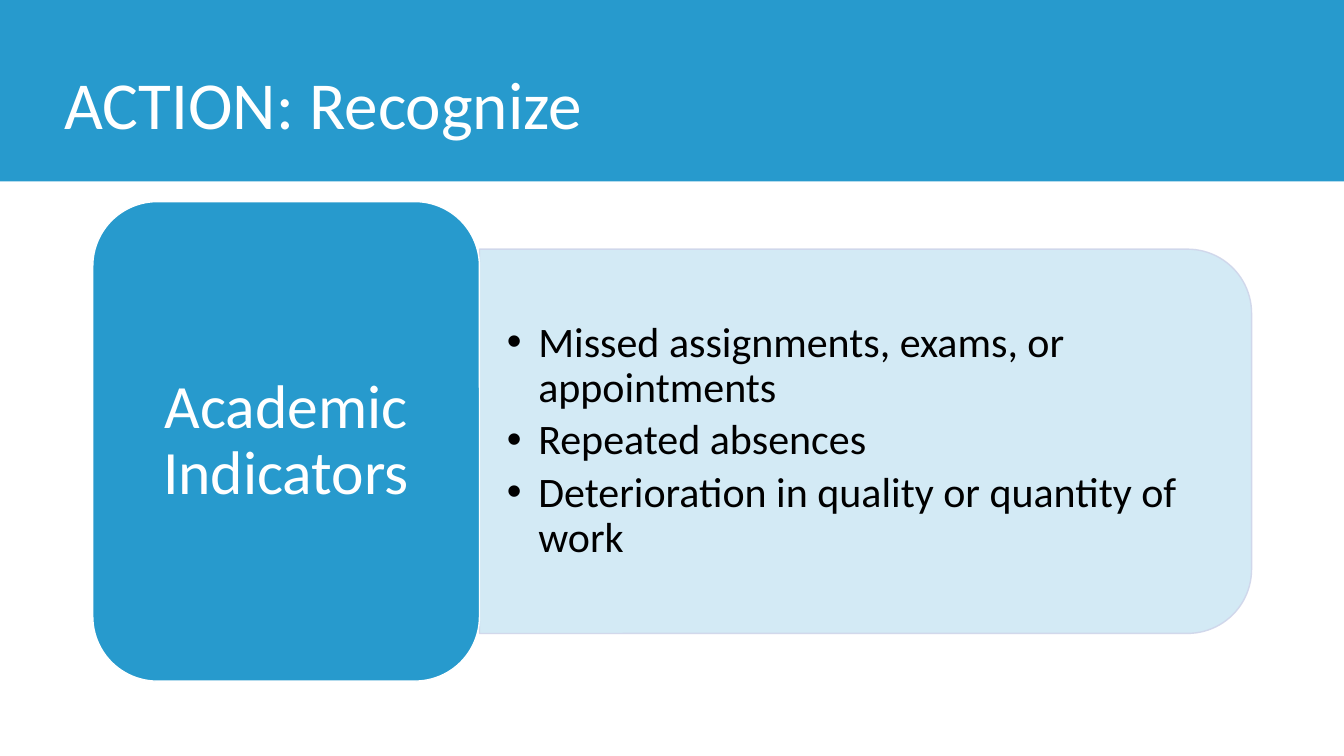
from dataclasses import dataclass

from lxml import etree
from pptx import Presentation
from pptx.dml.color import RGBColor
from pptx.enum.shapes import MSO_SHAPE
from pptx.enum.text import MSO_ANCHOR, PP_ALIGN
from pptx.oxml.ns import qn
from pptx.util import Pt

RECT = MSO_SHAPE.RECTANGLE
ROUNDED = MSO_SHAPE.ROUNDED_RECTANGLE
TWO_ROUNDED = MSO_SHAPE.ROUND_2_SAME_RECTANGLE
MIDDLE = MSO_ANCHOR.MIDDLE
LEFT, CENTER = PP_ALIGN.LEFT, PP_ALIGN.CENTER


@dataclass(frozen=True)
class Theme:
    """Hold the colours, font and type sizes of the slide."""
    blue: str = "279ACD"
    white: str = "FFFFFF"
    black: str = "000000"
    pale_line: str = "CFD5EA"
    font: str = "Calibri"
    title: int = 48
    label: int = 44
    body: int = 30


THEME = Theme()


def set_alpha(fill, percent):
    """Make a solid fill element partly transparent."""
    color = fill.find(qn("a:srgbClr"))
    etree.SubElement(color, qn("a:alpha"), val=str(percent * 1000))


def add_block(s, kind, left, top, width, height, line=None):
    """Add a blue preset shape with an optional one-point outline."""
    sp = s.shapes.add_shape(kind, Pt(left), Pt(top), Pt(width), Pt(height))
    sp.shadow.inherit = False
    sp.fill.solid()
    sp.fill.fore_color.rgb = RGBColor.from_string(THEME.blue)
    if line:
        sp.line.color.rgb = RGBColor.from_string(line)
        sp.line.width = Pt(1)
    else:
        sp.line.fill.background()
    return sp


def add_panel(s, left, top, width, height):
    """Add the pale panel, turned so that its right corners are round."""
    shift = (width - height) / 2
    sp = add_block(s, TWO_ROUNDED, left + shift, top - shift, height, width, THEME.pale_line)
    sp.rotation = 90
    props = sp._element.spPr
    set_alpha(props.find(qn("a:solidFill")), 20)
    set_alpha(props.find(qn("a:ln")).find(qn("a:solidFill")), 90)


def add_bullet(p, indent):
    """Give a paragraph a hanging round bullet."""
    props = p._p.get_or_add_pPr()
    props.set("marL", str(Pt(indent)))
    props.set("indent", str(-Pt(indent)))
    etree.SubElement(props, qn("a:buFont"), typeface="Arial")
    etree.SubElement(props, qn("a:buChar"), char="•")


def write_text(sp, lines, size, color, align=LEFT, inset=(7.2, 3.6), bullets=False):
    """Write vertically centred paragraphs into a shape."""
    tf = sp.text_frame
    tf.word_wrap = True
    tf.vertical_anchor = MIDDLE
    tf.margin_left = tf.margin_right = Pt(inset[0])
    tf.margin_top = tf.margin_bottom = Pt(inset[1])
    for i, line in enumerate(lines):
        p = tf.paragraphs[0] if i == 0 else tf.add_paragraph()
        p.text = line
        p.alignment = align
        p.line_spacing = 0.9
        if bullets:
            p.space_after = Pt(5)
            add_bullet(p, 22.5)
        p.font.name = THEME.font
        p.font.size = Pt(size)
        p.font.color.rgb = RGBColor.from_string(color)


def add_text(s, left, top, width, height, lines, size, color, **options):
    """Add a text box and write its paragraphs."""
    sp = s.shapes.add_textbox(Pt(left), Pt(top), Pt(width), Pt(height))
    write_text(sp, lines, size, color, **options)


def main():
    """Build the slide and save it."""
    prs = Presentation()
    prs.slide_width, prs.slide_height = Pt(960), Pt(540)
    s = prs.slides.add_slide(prs.slide_layouts[6])

    add_block(s, RECT, 0, 0, 960, 129.6)
    add_text(s, 38.9, 26.6, 849.6, 100.8, ["ACTION: Recognize"], THEME.title, THEME.white)

    add_panel(s, 342.5, 178, 551.5, 274.5)
    indicators = [
        "Missed assignments, exams, or appointments",
        "Repeated absences",
        "Deterioration in quality or quantity of work",
    ]
    add_text(s, 342.5, 191.5, 538, 247.5, indicators, THEME.body, THEME.black,
             inset=(19.5, 9.75), bullets=True)

    label = add_block(s, ROUNDED, 66.3, 144, 276.2, 342.5, THEME.white)
    write_text(label, ["Academic Indicators"], THEME.label, THEME.white,
               align=CENTER, inset=(13.2, 6.6))

    prs.save("out.pptx")


if __name__ == "__main__":
    main()
